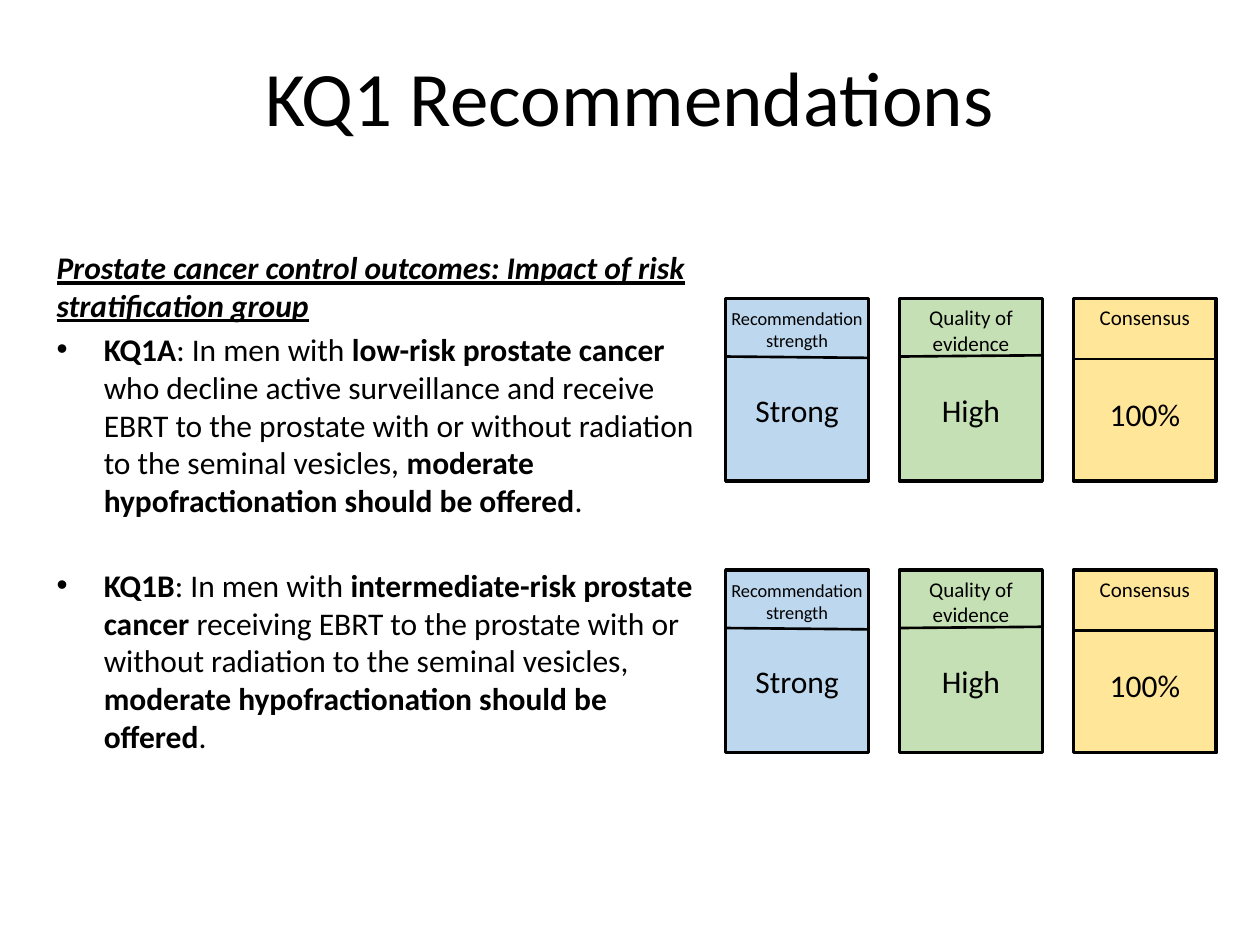
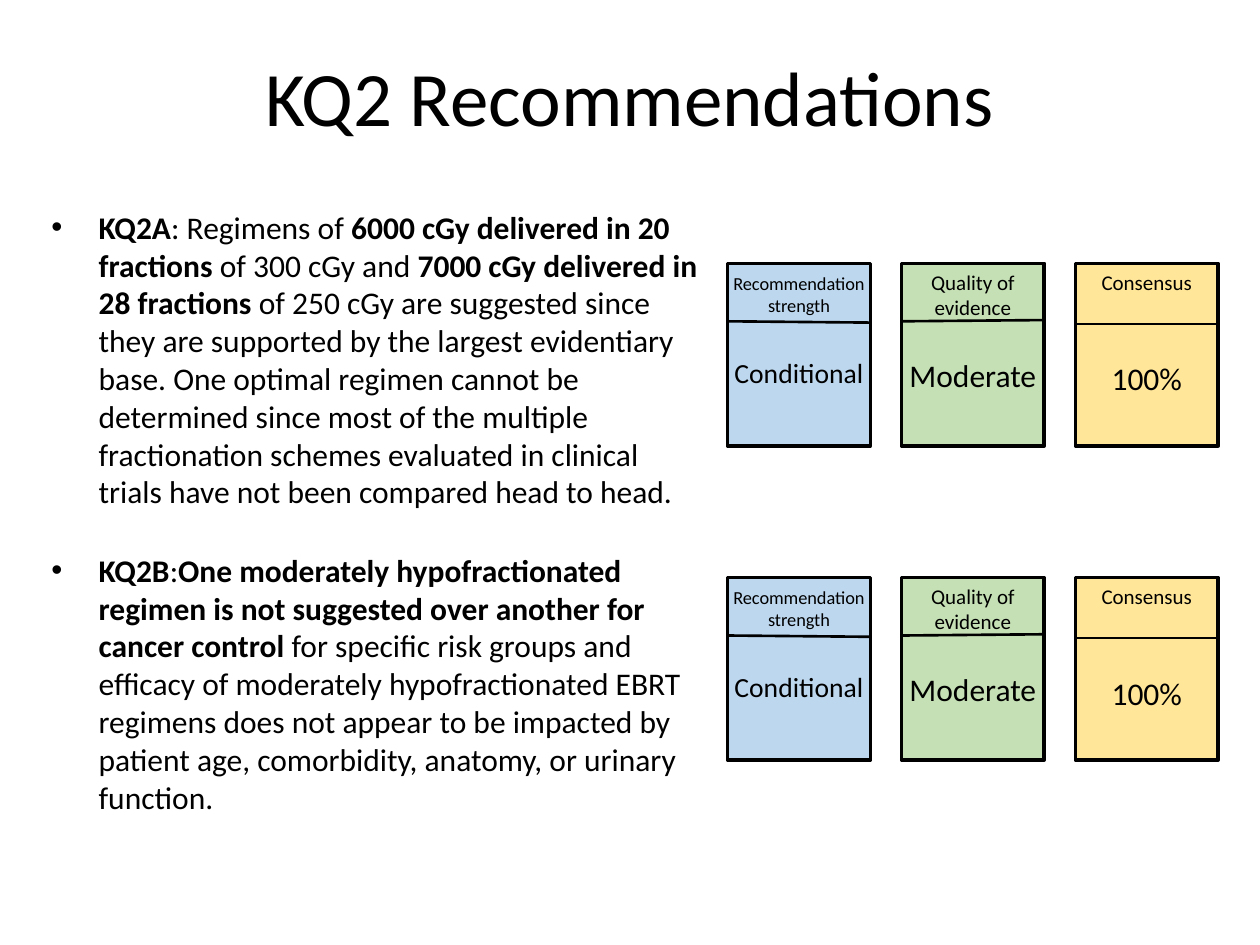
import dataclasses

import lxml.etree
import pptx
import pptx.dml.color
import pptx.enum.shapes
import pptx.enum.text
import pptx.oxml.ns
import pptx.util

RGBColor = pptx.dml.color.RGBColor
Align = pptx.enum.text.PP_ALIGN

# Shared look
BLACK = RGBColor(0x00, 0x00, 0x00)
WHITE = RGBColor(0xFF, 0xFF, 0xFF)
BLUE = RGBColor(0xBD, 0xD7, 0xEE)
GREEN = RGBColor(0xC5, 0xE0, 0xB4)
YELLOW = RGBColor(0xFF, 0xE6, 0x99)
FONT = "Calibri"
BODY_SIZE = 18
SLIDE_WIDTH = pptx.util.Inches(10)
SLIDE_HEIGHT = pptx.util.Inches(7.5)
BULLET_INDENT = pptx.util.Inches(0.375)

# Rating cards, in percent of the slide's width and height
CARD_WIDTH, CARD_HEIGHT = 11.33, 19.33
CARD_STEP = 13.8
HEADER_HEIGHT, VALUE_HEIGHT = 6.67, 5.4


@dataclasses.dataclass(frozen=True)
class CardStyle:
    """A rating card; vertical places are percent below the card's top."""
    heading: str
    heading_size: float
    heading_insets: tuple[float, float]
    fill: RGBColor
    divider_left: float
    divider_right: float
    value_top: float


@dataclasses.dataclass(frozen=True)
class Rating:
    value: str
    size: float = BODY_SIZE


@dataclasses.dataclass(frozen=True)
class Statement:
    """Text whose bold parts stand between double asterisks."""
    text: str
    space_before: float = 0
    bulleted: bool = True


@dataclasses.dataclass(frozen=True)
class Recommendations:
    title: str
    body_area: tuple[float, float, float, float]
    statements: list[Statement]
    cards_left: float
    card_tops: tuple[float, float]
    ratings: list[Rating]


CARD_STYLES = [
    CardStyle("Recommendation strength", 10.5, (0.04, 0.07), BLUE, 6.13, 6.27, 9.1),
    CardStyle("Quality of evidence", 12, (0.1, 0.05), GREEN, 6.13, 6, 9.1),
    CardStyle("Consensus", 12, (0.1, 0.05), YELLOW, 6.4, 6.4, 9.5),
]

SLIDES = [
    Recommendations(
        "KQ1 Recommendations",
        (3.5, 25.6, 53.2, 51.87),
        [
            Statement("Prostate cancer control outcomes: Impact of risk "
                      "stratification group", bulleted=False),
            Statement("**KQ1A**: In men with **low-risk prostate cancer** who "
                      "decline active surveillance and receive EBRT to the "
                      "prostate with or without radiation to the seminal "
                      "vesicles, **moderate hypofractionation should be "
                      "offered**.", 3.6),
            Statement("**KQ1B**: In men with **intermediate-risk prostate "
                      "cancer **receiving EBRT to the prostate with or without "
                      "radiation to the seminal vesicles, **moderate "
                      "hypofractionation should be offered**.", 26.7),
        ],
        57.6, (31.6, 60.33),
        [Rating("Strong"), Rating("High"), Rating("100%")],
    ),
    Recommendations(
        "KQ2 Recommendations",
        (3.1, 21.33, 54, 51.6),
        [
            Statement("**KQ2A**: Regimens of **6000 cGy delivered in 20 "
                      "fractions **of 300 cGy and **7000 cGy delivered in 28 "
                      "fractions** of 250 cGy are suggested since they are "
                      "supported by the largest evidentiary base. One optimal "
                      "regimen cannot be determined since most of the multiple "
                      "fractionation schemes evaluated in clinical trials have "
                      "not been compared head to head."),
            Statement("**KQ2B**:**One moderately hypofractionated regimen is "
                      "not suggested over another for cancer control **for "
                      "specific risk groups and efficacy of moderately "
                      "hypofractionated EBRT regimens does not appear to be "
                      "impacted by patient age, comorbidity, anatomy, or "
                      "urinary function.", 23.3),
        ],
        57.75, (27.87, 61.12),
        [Rating("Conditional", 15.8), Rating("Moderate"), Rating("100%")],
    ),
]


def across(percent: float) -> int:
    return round(SLIDE_WIDTH * percent / 100)


def down(percent: float) -> int:
    return round(SLIDE_HEIGHT * percent / 100)


def area(left: float, top: float, width: float, height: float) -> tuple[int, ...]:
    return across(left), down(top), across(width), down(height)


def style_font(font, size: float) -> None:
    font.name = FONT
    font.size = pptx.util.Pt(size)
    font.color.rgb = BLACK


def add_text_frame(shapes, place: tuple[int, ...], insets: tuple[float, float]):
    frame = shapes.add_textbox(*place).text_frame
    frame.word_wrap = True
    side, end = map(pptx.util.Inches, insets)
    frame.margin_left = frame.margin_right = side
    frame.margin_top = frame.margin_bottom = end
    return frame


def add_centred_text(shapes, text: str, size: float, place: tuple[int, ...],
                     insets: tuple[float, float]) -> None:
    frame = add_text_frame(shapes, place, insets)
    frame.text = text
    paragraph = frame.paragraphs[0]
    paragraph.alignment = Align.CENTER
    style_font(paragraph.runs[0].font, size)


def add_bullet(paragraph) -> None:
    properties = paragraph._p.get_or_add_pPr()
    properties.set("marL", str(BULLET_INDENT))
    properties.set("indent", str(-BULLET_INDENT))
    qn = pptx.oxml.ns.qn
    lxml.etree.SubElement(properties, qn("a:buFont")).set("typeface", "Arial")
    lxml.etree.SubElement(properties, qn("a:buChar")).set("char", "•")


def add_statements(shapes, recommendations: Recommendations) -> None:
    frame = add_text_frame(shapes, area(*recommendations.body_area), (0.1, 0.05))
    for index, statement in enumerate(recommendations.statements):
        paragraph = frame.add_paragraph() if index else frame.paragraphs[0]
        if statement.bulleted:
            add_bullet(paragraph)
        if statement.space_before:
            paragraph.space_before = pptx.util.Pt(statement.space_before)
        for position, part in enumerate(statement.text.split("**")):
            if not part:
                continue
            run = paragraph.add_run()
            run.text = part
            style_font(run.font, BODY_SIZE)
            run.font.bold = position % 2 == 1
            if not statement.bulleted:
                run.font.bold = run.font.italic = run.font.underline = True


def add_divider(shapes, left: float, top: float, style: CardStyle) -> None:
    divider = shapes.add_connector(
        pptx.enum.shapes.MSO_CONNECTOR.STRAIGHT,
        across(left), down(top + style.divider_left),
        across(left + CARD_WIDTH), down(top + style.divider_right))
    divider.line.color.rgb = BLACK
    divider.line.width = pptx.util.Pt(1.5)
    lxml.etree.SubElement(divider._element.spPr, pptx.oxml.ns.qn("a:effectLst"))


def add_card(shapes, left: float, top: float, style: CardStyle,
             rating: Rating) -> None:
    card = shapes.add_shape(pptx.enum.shapes.MSO_SHAPE.RECTANGLE,
                            *area(left, top, CARD_WIDTH, CARD_HEIGHT))
    card.shadow.inherit = False
    card.fill.solid()
    card.fill.fore_color.rgb = style.fill
    card.line.color.rgb = BLACK
    card.line.width = pptx.util.Pt(2)
    add_divider(shapes, left, top, style)
    add_centred_text(shapes, style.heading, style.heading_size,
                     area(left, top, CARD_WIDTH, HEADER_HEIGHT),
                     style.heading_insets)
    add_centred_text(shapes, rating.value, rating.size,
                     area(left, top + style.value_top, CARD_WIDTH, VALUE_HEIGHT),
                     (0.04, 0.05))


def add_recommendations(deck, recommendations: Recommendations) -> None:
    slide = deck.slides.add_slide(deck.slide_layouts[6])
    slide.background.fill.solid()
    slide.background.fill.fore_color.rgb = WHITE
    add_centred_text(slide.shapes, recommendations.title, 44,
                     area(5, 4, 90, 16.67), (0.1, 0.09))
    add_statements(slide.shapes, recommendations)
    # One group of cards for each recommendation
    for top in recommendations.card_tops:
        cards = slide.shapes.add_group_shape().shapes
        for column, (style, rating) in enumerate(
                zip(CARD_STYLES, recommendations.ratings)):
            left = recommendations.cards_left + column * CARD_STEP
            add_card(cards, left, top, style, rating)


def main() -> None:
    deck = pptx.Presentation()
    deck.slide_width, deck.slide_height = SLIDE_WIDTH, SLIDE_HEIGHT
    for recommendations in SLIDES:
        add_recommendations(deck, recommendations)
    deck.save("out.pptx")


if __name__ == "__main__":
    main()
